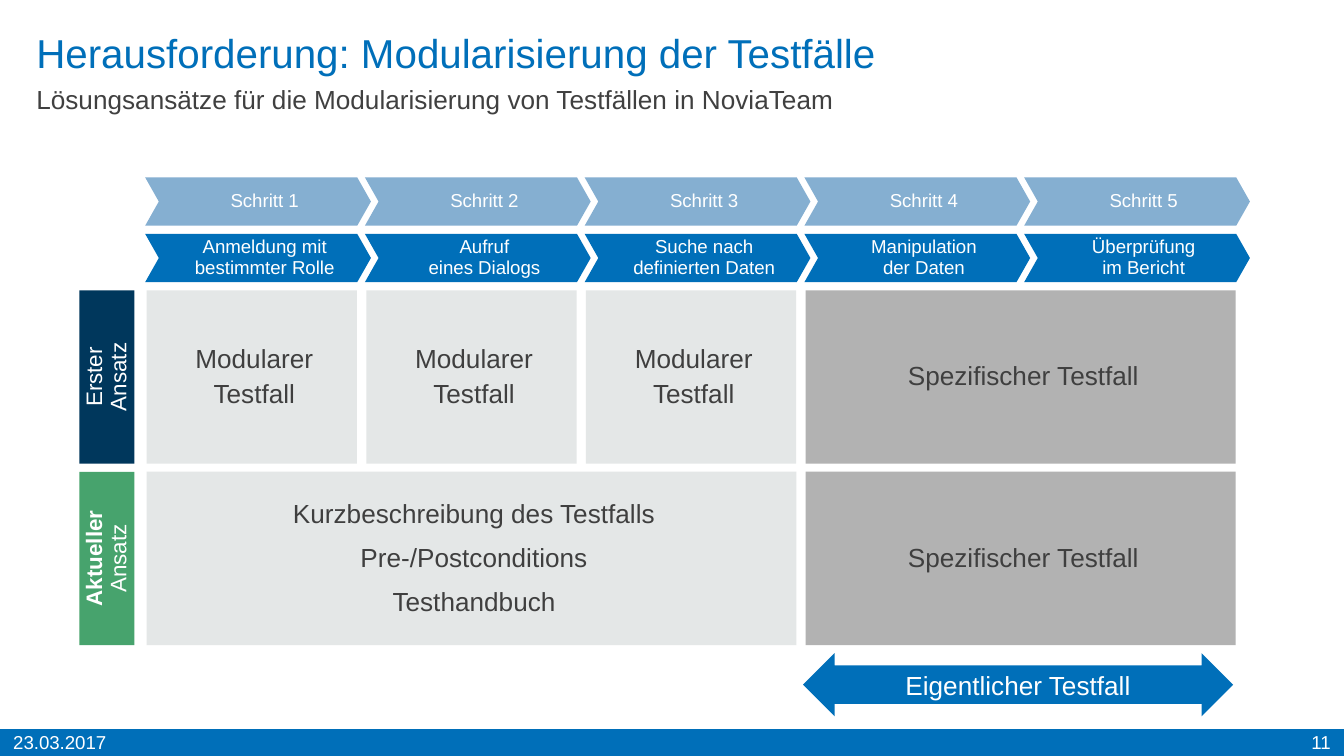
from dataclasses import dataclass

from pptx import Presentation
from pptx.dml.color import RGBColor
from pptx.enum.shapes import MSO_SHAPE
from pptx.enum.text import MSO_ANCHOR, PP_ALIGN
from pptx.util import Inches, Pt

RECT, CHEVRON, ARROW = MSO_SHAPE.RECTANGLE, MSO_SHAPE.CHEVRON, MSO_SHAPE.LEFT_RIGHT_ARROW
LEFT, CENTER, RIGHT = PP_ALIGN.LEFT, PP_ALIGN.CENTER, PP_ALIGN.RIGHT
TOP, MIDDLE = MSO_ANCHOR.TOP, MSO_ANCHOR.MIDDLE

COLORS = {
    "blue": "006FB9", "light_blue": "85AFD1", "navy": "00375C", "green": "47A36D",
    "pale": "E4E7E7", "gray": "B2B2B2", "text": "3F3F3F", "subtitle": "404040",
    "white": "FFFFFF",
}
WIDTH, HEIGHT = 10, 5.625
GRID_X, COL, COL_GAP = 1.09, 1.635, 0.07
GRID_Y, ROW, ROW_GAP = 2.16, 1.35, 0.06
STEP_Y, STEP_ROW, STEP_W = 1.32, 0.42, 1.68
LABEL_X, LABEL_W = 0.59, 0.41
FOOTER_H, FOOTER_W = 0.2, WIDTH * 0.233


@dataclass
class TextStyle:
    size: float
    color: str
    align: PP_ALIGN = CENTER
    anchor: MSO_ANCHOR = MIDDLE
    insets: tuple[float, float, float, float] = (0, 0, 0, 0)
    line: float = 1.0
    gap: float = 0


@dataclass
class Cell:
    col: int
    row: int
    span: int
    fill: str
    lines: list[str]
    gap: float = 0


@dataclass
class RowLabel:
    row: int
    fill: str
    lines: list[str]
    bold_first: bool = False


TITLE = TextStyle(21.6, "blue", LEFT, TOP)
SUBTITLE = TextStyle(14, "subtitle", LEFT, TOP)
DATE = TextStyle(10, "white", LEFT, insets=(0.1, 0.05, 0.1, 0.05))
NUMBER = TextStyle(10, "white", RIGHT, insets=(0.1, 0.05, 0.1, 0.05))
STEP = TextStyle(10, "white", insets=(0.1, 0.04, 0, 0.04), line=0.9)
LABEL = TextStyle(12, "white", insets=(0.12, 0, 0.12, 0), line=0.9)
ARROW_TEXT = TextStyle(14, "white", insets=(0.1, 0.05, 0.1, 0.05))

STEPS = [
    ("light_blue", [f"Schritt {n}" for n in range(1, 6)]),
    ("blue", ["Anmeldung mit bestimmter Rolle", "Aufruf\neines Dialogs",
              "Suche nach definierten Daten", "Manipulation\nder Daten",
              "Überprüfung\nim Bericht"]),
]
CELLS = [
    *(Cell(col, 0, 1, "pale", ["Modularer", "Testfall"], 3.2) for col in range(3)),
    Cell(0, 1, 3, "pale",
         ["Kurzbeschreibung des Testfalls", "Pre-/Postconditions", "Testhandbuch"], 7.5),
    *(Cell(3, row, 2, "gray", ["Spezifischer Testfall"]) for row in range(2)),
]
LABELS = [
    RowLabel(0, "navy", ["Erster", "Ansatz"]),
    RowLabel(1, "green", ["Aktueller", "Ansatz"], bold_first=True),
]


def rgb(name: str) -> RGBColor:
    return RGBColor.from_string(COLORS[name])


def span_width(cols: int) -> float:
    return cols * COL - COL_GAP


def write(s, lines: list[str], style: TextStyle) -> None:
    tf = s.text_frame
    tf.word_wrap = True
    tf.vertical_anchor = style.anchor
    tf.margin_left, tf.margin_top, tf.margin_right, tf.margin_bottom = map(Inches, style.insets)
    for i, line in enumerate(lines):
        p = tf.add_paragraph() if i else tf.paragraphs[0]
        p.text = line
        p.alignment = style.align
        p.line_spacing = style.line
        if i:
            p.space_before = Pt(style.gap)
        p.font.name = "Arial"
        p.font.size = Pt(style.size)
        p.font.color.rgb = rgb(style.color)


def add_text(slide, x: float, y: float, w: float, h: float, text: str, style: TextStyle) -> None:
    write(slide.shapes.add_textbox(*map(Inches, (x, y, w, h))), [text], style)


def add_block(slide, kind: MSO_SHAPE, x: float, y: float, w: float, h: float, fill: str):
    s = slide.shapes.add_shape(kind, *map(Inches, (x, y, w, h)))
    s.shadow.inherit = False
    s.fill.solid()
    s.fill.fore_color.rgb = rgb(fill)
    s.line.fill.background()
    return s


def add_step(slide, col: int, row: int, fill: str, text: str) -> None:
    s = add_block(slide, CHEVRON, GRID_X - 0.01 + col * COL, STEP_Y + row * STEP_ROW,
                  STEP_W, STEP_ROW - ROW_GAP, fill)
    s.adjustments[0] = 0.283
    write(s, [text], STEP)


def add_cell(slide, cell: Cell) -> None:
    s = add_block(slide, RECT, GRID_X + cell.col * COL, GRID_Y + cell.row * ROW,
                  span_width(cell.span), ROW - ROW_GAP, cell.fill)
    write(s, cell.lines, TextStyle(14, "text", insets=(0.08, 0.04, 0.04, 0.04),
                                   line=0.95, gap=cell.gap))


def add_label(slide, label: RowLabel) -> None:
    length = ROW - ROW_GAP
    shift = (length - LABEL_W) / 2
    s = add_block(slide, RECT, LABEL_X - shift, GRID_Y + label.row * ROW + shift,
                  length, LABEL_W, label.fill)
    s.rotation = 270
    write(s, label.lines, LABEL)
    s.text_frame.paragraphs[0].font.bold = label.bold_first


def main() -> None:
    prs = Presentation()
    prs.slide_width, prs.slide_height = Inches(WIDTH), Inches(HEIGHT)
    slide = prs.slides.add_slide(prs.slide_layouts[6])

    footer_y = HEIGHT - FOOTER_H
    add_block(slide, RECT, 0, footer_y, WIDTH, FOOTER_H, "blue")
    add_text(slide, 0, footer_y, FOOTER_W, FOOTER_H, "23.03.2017", DATE)
    add_text(slide, WIDTH - FOOTER_W, footer_y, FOOTER_W, FOOTER_H, "11", NUMBER)
    add_text(slide, 0.27, 0.21, 7.28, 0.39,
             "Herausforderung: Modularisierung der Testfälle", TITLE)
    add_text(slide, 0.27, 0.62, 7.28, 0.24,
             "Lösungsansätze für die Modularisierung von Testfällen in NoviaTeam", SUBTITLE)

    for row, (fill, texts) in enumerate(STEPS):
        for col, text in enumerate(texts):
            add_step(slide, col, row, fill, text)
    for cell in CELLS:
        add_cell(slide, cell)
    for label in LABELS:
        add_label(slide, label)

    arrow = add_block(slide, ARROW, GRID_X + 3 * COL - 0.02, GRID_Y + 2 * ROW,
                      span_width(2), 0.47, "blue")
    arrow.adjustments[0], arrow.adjustments[1] = 0.607, 0.5
    write(arrow, ["Eigentlicher Testfall"], ARROW_TEXT)

    prs.save("out.pptx")


if __name__ == "__main__":
    main()
